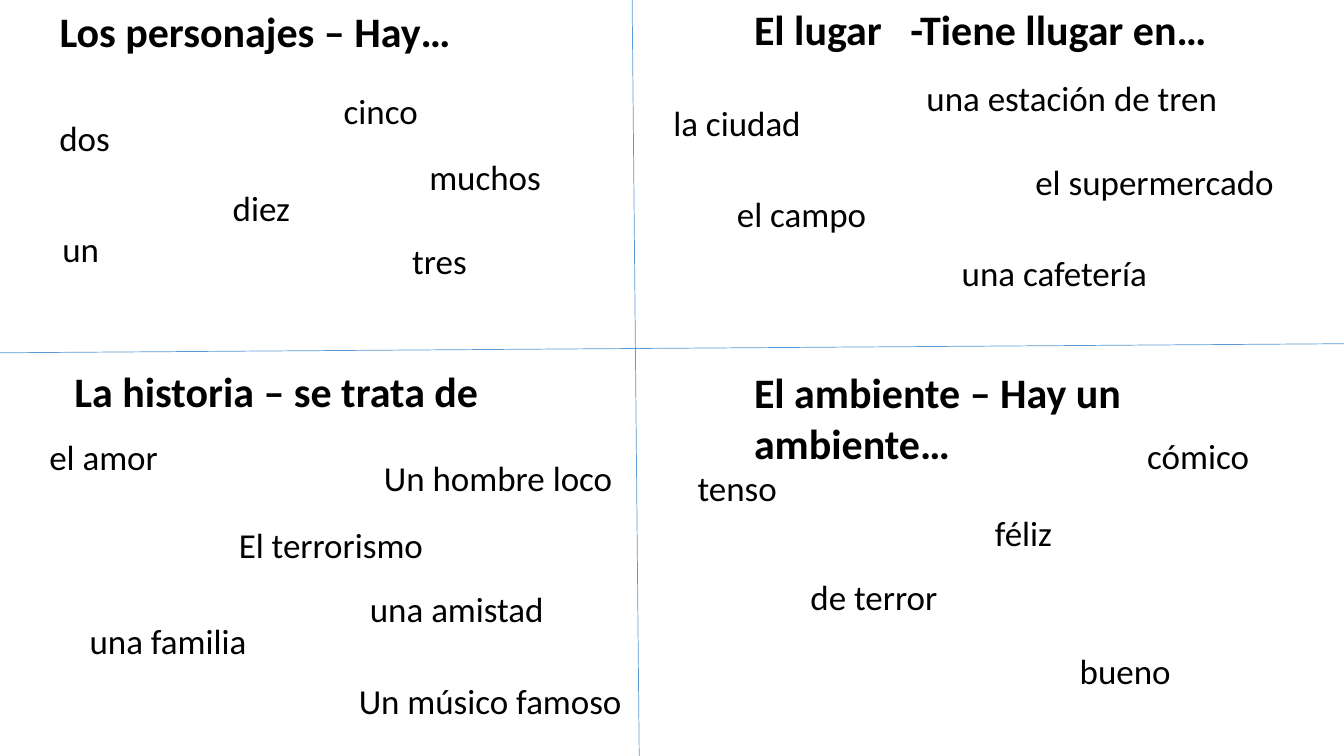
"""Build a four-quadrant Spanish vocabulary slide about describing a film."""
from pptx import Presentation
from pptx.dml.color import RGBColor
from pptx.enum.shapes import MSO_CONNECTOR
from pptx.enum.text import MSO_ANCHOR, MSO_AUTO_SIZE, PP_ALIGN
from pptx.oxml.ns import qn
from pptx.util import Inches, Pt

BLACK = RGBColor(0x00, 0x00, 0x00)
BLUE = RGBColor(0x5B, 0x9B, 0xD5)
STRAIGHT = MSO_CONNECTOR.STRAIGHT
TOP = MSO_ANCHOR.TOP
GROW = MSO_AUTO_SIZE.SHAPE_TO_FIT_TEXT
LEFT = PP_ALIGN.LEFT

FRAME = {"word_wrap": True, "auto_size": GROW, "vertical_anchor": TOP}
HEADING = {"name": "Calibri", "size": Pt(30), "bold": True}
WORD = {"name": "Calibri", "size": Pt(25), "bold": False}
WORD_HEIGHT = 0.52

HEADINGS = [
    ("Los personajes – Hay…", 0.49, 0, 0.61),
    ("El lugar   -Tiene llugar en…", 7.38, -0.01, 1.11),
    ("La historia – se trata de", 0.64, 3.58, 0.61),
    ("El ambiente – Hay un ambiente…", 7.38, 3.59, 1.11),
]
DIVIDERS = [(6.27, 0, 6.34, 7.5), (13.33, 3.41, 0, 3.5)]
WORDS = [
    ("dos", 0.49, 1.11, 1.35),
    ("cinco", 3.31, 0.84, 1.35),
    ("diez", 2.21, 1.8, 1.35),
    ("muchos", 4.16, 1.49, 1.35),
    ("un", 0.52, 2.21, 1.35),
    ("tres", 3.99, 2.33, 1.35),
    ("la ciudad", 6.58, 0.96, 2.28),
    ("el campo", 7.21, 1.86, 2.08),
    ("una estación de tren", 9.09, 0.71, 4.11),
    ("el supermercado", 10.17, 1.54, 3.03),
    ("una cafetería", 9.44, 2.45, 2.98),
    ("el amor", 0.39, 4.27, 1.35),
    ("Un hombre loco", 3.71, 4.48, 2.7),
    ("El terrorismo", 2.27, 5.14, 2.74),
    ("una amistad", 3.57, 5.78, 2.41),
    ("una familia", 0.79, 6.1, 2.16),
    ("Un músico famoso", 3.46, 6.69, 3.12),
    ("tenso", 6.82, 4.58, 1.35),
    ("cómico", 11.28, 4.26, 1.35),
    ("féliz", 9.77, 5.03, 1.35),
    ("de terror", 7.94, 5.66, 1.83),
    ("bueno", 10.61, 6.39, 1.35),
]


def write(sp, text, font):
    tf = sp.text_frame
    for key, value in FRAME.items():
        setattr(tf, key, value)
    p = tf.paragraphs[0]
    p.alignment = LEFT
    r = p.add_run()
    r.text = text
    for key, value in font.items():
        setattr(r.font, key, value)
    r.font.color.rgb = BLACK


prs = Presentation()
prs.slide_width, prs.slide_height = Inches(13.33), Inches(7.5)
s = prs.slides.add_slide(prs.slide_layouts.get_by_name("Title Only"))

for i, (text, x, y, h) in enumerate(HEADINGS):
    box = [Inches(v) for v in (x, y, 5.48, h)]
    if i == 0:
        sp = s.shapes.title
        sp.left, sp.top, sp.width, sp.height = box
    else:
        sp = s.shapes.add_textbox(*box)
    write(sp, text, HEADING)

for ends in DIVIDERS:
    line = s.shapes.add_connector(STRAIGHT, *[Inches(v) for v in ends])
    line.line.color.rgb = BLUE
    line.line.width = Pt(0.5)
    spPr = line._element.spPr
    spPr.append(spPr.makeelement(qn("a:effectLst"), {}))

for text, x, y, w in WORDS:
    sp = s.shapes.add_textbox(*[Inches(v) for v in (x, y, w, WORD_HEIGHT)])
    write(sp, text, WORD)

prs.save("out.pptx")
